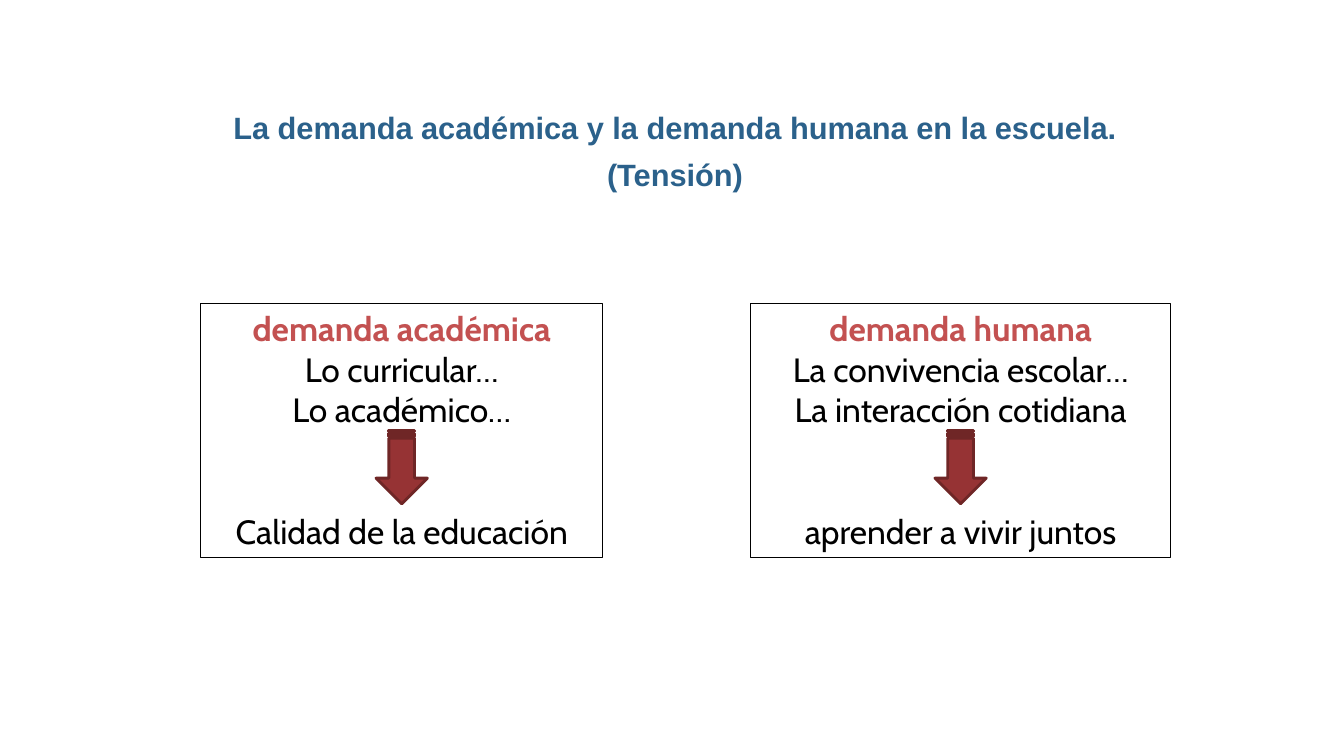
from pptx import Presentation
from pptx.dml.color import RGBColor
from pptx.enum.shapes import MSO_SHAPE as Shape
from pptx.enum.text import MSO_ANCHOR as Anchor, PP_ALIGN as Align
from pptx.util import Pt

BLUE = RGBColor(0x2B, 0x61, 0x8B)
CORAL = RGBColor(0xC3, 0x51, 0x51)
BLACK = RGBColor(0, 0, 0)
MAROON = RGBColor(0x96, 0x33, 0x34)
DARK_MAROON = RGBColor(0x6F, 0x26, 0x26)

BOX_TOP, BOX_HEIGHT = 216.7, 181.6
ARROW_LENGTH, ARROW_WIDTH, ARROW_MIDDLE = 52.6, 36.7, 333.6
ARROW_GAP = 58  # two lines of text, left free for the arrow

DEMANDS = [
    (143.3, 287.3, ["demanda académica", "Lo curricular…", "Lo académico…",
                    "Calidad de la educación"]),
    (536.4, 299.5, ["demanda humana", "La convivencia escolar…",
                    "La interacción cotidiana", "aprender a vivir juntos"]),
]


def add_line(frame, index, text, font, size, color, bold):
    """Add one centred paragraph, using the frame's own first one for index 0."""
    para = frame.add_paragraph() if index else frame.paragraphs[0]
    para.alignment = Align.CENTER
    span = para.add_run()
    span.text = text
    span.font.name = font
    span.font.size = Pt(size)
    span.font.bold = bold
    span.font.color.rgb = color
    return para


deck = Presentation()
deck.slide_width, deck.slide_height = Pt(960), Pt(540)
page = deck.slides.add_slide(deck.slide_layouts[6])

title = page.shapes.add_textbox(Pt(79), Pt(70.5), Pt(806.4), Pt(90)).text_frame
title.word_wrap = True
title.margin_top = title.margin_bottom = Pt(7.2)
for index, text in enumerate(
        ["La demanda académica y la demanda humana en la escuela.", "(Tensión)"]):
    para = add_line(title, index, text, "Arial", 22, BLUE, True)
    if index:
        para.space_before = Pt(7)

for left, width, lines in DEMANDS:
    box = page.shapes.add_shape(
        Shape.RECTANGLE, Pt(left), Pt(BOX_TOP), Pt(width), Pt(BOX_HEIGHT))
    box.shadow.inherit = False
    box.fill.background()
    box.line.color.rgb = BLACK
    box.line.width = Pt(0.75)
    frame = box.text_frame
    frame.word_wrap = True
    frame.vertical_anchor = Anchor.TOP
    for index, text in enumerate(lines):
        heading = index == 0
        para = add_line(frame, index, text, "Cabin", 24,
                        CORAL if heading else BLACK, heading)
    para.space_before = Pt(ARROW_GAP)

    arrow = page.shapes.add_shape(
        Shape.STRIPED_RIGHT_ARROW,
        Pt(left + (width - ARROW_LENGTH) / 2), Pt(ARROW_MIDDLE - ARROW_WIDTH / 2),
        Pt(ARROW_LENGTH), Pt(ARROW_WIDTH))
    arrow.rotation = 90
    arrow.shadow.inherit = False
    arrow.fill.solid()
    arrow.fill.fore_color.rgb = MAROON
    arrow.line.color.rgb = DARK_MAROON
    arrow.line.width = Pt(2)

deck.save("out.pptx")
